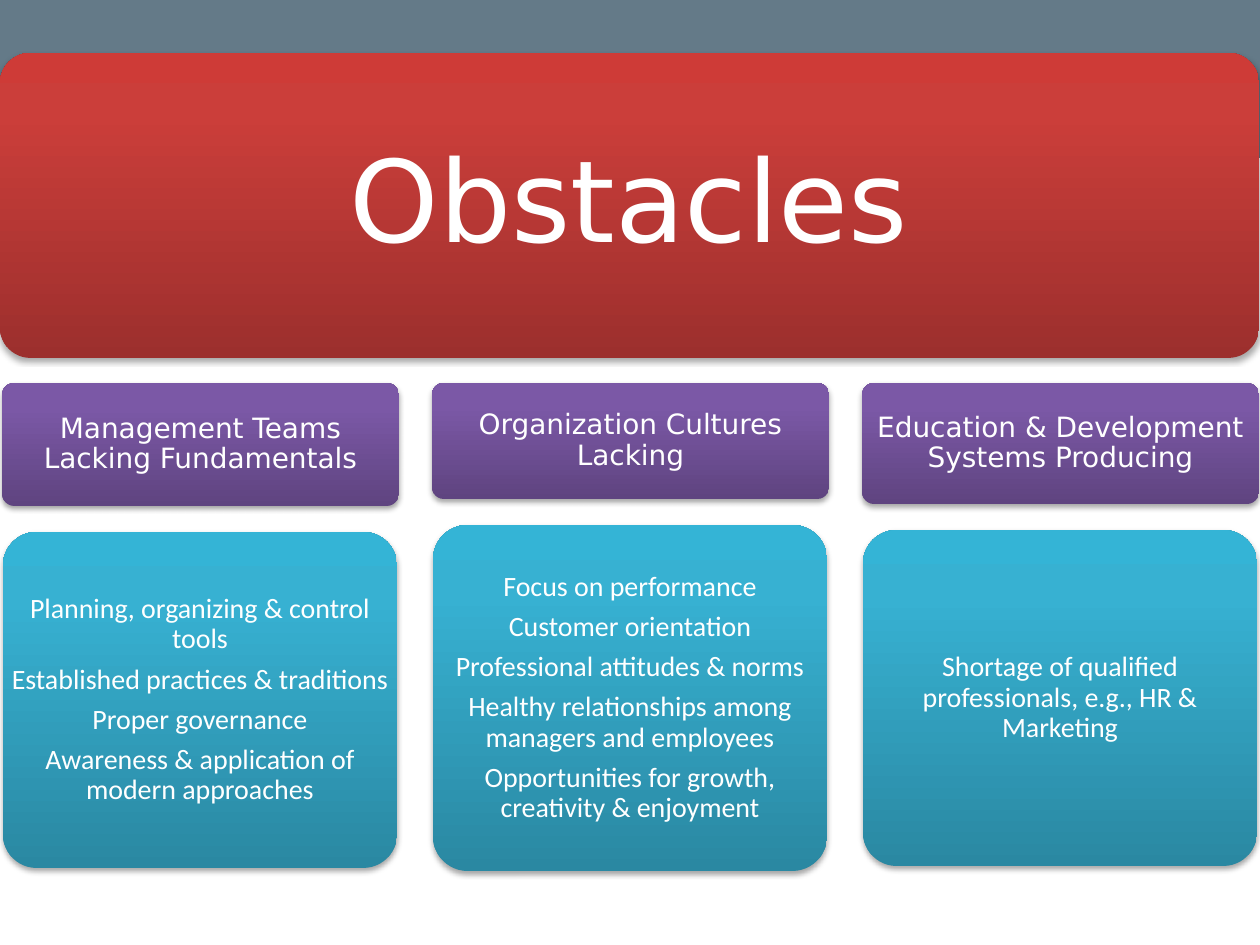
from lxml.etree import SubElement
from pptx import Presentation
from pptx.dml.color import RGBColor
from pptx.enum.shapes import MSO_SHAPE
from pptx.enum.text import MSO_ANCHOR, PP_ALIGN
from pptx.oxml.ns import qn
from pptx.util import Pt

PX = 914400 / 126
COLORS = {
    "band": "647A88",
    "white": "FFFFFF",
    "shadow": "000000",
}
GRADIENTS = {
    "red": {0: "9C2F2D", 80: "CB3E3A", 100: "CE3B37"},
    "purple": {0: "5F4480", 80: "7B58A6", 100: "7C57A8"},
    "teal": {0: "2A88A2", 80: "37B1D2", 100: "34B4D6"},
}
HEADING_FONT = "DejaVu Sans"
BODY_FONT = "Calibri"
GAP = 26
HEADER_TOP = 383
COLUMN_LEFT = 2
COLUMN_STEP = 430
HEADER_WIDTH = 397
LIST_WIDTH = 394

COLUMNS = [
    ("Management Teams Lacking Fundamentals", 123, 336, [
        "Planning, organizing & control tools",
        "Established practices & traditions",
        "Proper governance",
        "Awareness & application of modern approaches",
    ]),
    ("Organization Cultures Lacking", 116, 346, [
        "Focus on performance",
        "Customer orientation",
        "Professional attitudes & norms",
        "Healthy relationships among managers and employees",
        "Opportunities for growth, creativity & enjoyment",
    ]),
    ("Education & Development Systems Producing", 121, 336, [
        "Shortage of qualified professionals, e.g., HR & Marketing",
    ]),
]


def px(value):
    return round(value * PX)


def add_element(parent, tag, **attributes):
    return SubElement(parent, qn(tag), {key: str(value) for key, value in attributes.items()})


def add_color(parent, color):
    return add_element(parent, "a:srgbClr", val=color)


def add_band(page):
    band = page.shapes.add_shape(MSO_SHAPE.RECTANGLE, 0, 0, px(1260), px(158))
    band.shadow.inherit = False
    band.fill.solid()
    band.fill.fore_color.rgb = RGBColor.from_string(COLORS["band"])
    band.line.fill.background()


def set_gradient(shape, stops):
    shape.fill.gradient()
    shape.fill.gradient_angle = 90
    stop_list = shape.element.spPr.find(qn("a:gradFill")).find(qn("a:gsLst"))
    for stop in list(stop_list):
        stop_list.remove(stop)
    for position, color in stops.items():
        add_color(add_element(stop_list, "a:gs", pos=position * 1000), color)


def set_shadow(shape):
    shape.shadow.inherit = False
    effects = shape.element.spPr.find(qn("a:effectLst"))
    shadow = add_element(effects, "a:outerShdw", blurRad=40000, dist=23000,
                         dir=5400000, rotWithShape=0)
    add_element(add_color(shadow, COLORS["shadow"]), "a:alpha", val=35000)


def add_text(page, area, lines, size, font, inset):
    box = page.shapes.add_textbox(*area)
    frame = box.text_frame
    frame.word_wrap = True
    frame.vertical_anchor = MSO_ANCHOR.MIDDLE
    frame.margin_left = frame.margin_right = px(inset)
    frame.margin_top = frame.margin_bottom = px(inset)
    frame.text = "\n".join(lines)
    for para in frame.paragraphs:
        para.alignment = PP_ALIGN.CENTER
        para.line_spacing = 0.9
        para.space_after = Pt(size * 0.35)
        para.font.size = Pt(size)
        para.font.name = font
        para.font.color.rgb = RGBColor.from_string(COLORS["white"])


def add_card(page, left, top, width, height, lines, gradient, size=16, font=HEADING_FONT, inset=8):
    area = [px(value) for value in (left, top, width, height)]
    card = page.shapes.add_shape(MSO_SHAPE.ROUNDED_RECTANGLE, *area)
    card.adjustments[0] = 0.1
    card.line.fill.background()
    set_gradient(card, GRADIENTS[gradient])
    set_shadow(card)
    add_text(page, area, lines, size, font, inset)


def add_column(page, left, header, header_height, list_height, items):
    add_card(page, left, HEADER_TOP, HEADER_WIDTH, header_height, [header], "purple")
    add_card(page, left + 1, HEADER_TOP + header_height + GAP, LIST_WIDTH, list_height,
             items, "teal", font=BODY_FONT)


def main():
    deck = Presentation()
    deck.slide_width = px(1260)
    deck.slide_height = px(945)
    page = deck.slides.add_slide(deck.slide_layouts[6])
    add_band(page)
    add_card(page, 0, 53, 1259, 305, ["Obstacles"], "red", size=65, inset=34)
    for index, column in enumerate(COLUMNS):
        add_column(page, COLUMN_LEFT + index * COLUMN_STEP, *column)
    deck.save("out.pptx")


if __name__ == "__main__":
    main()
